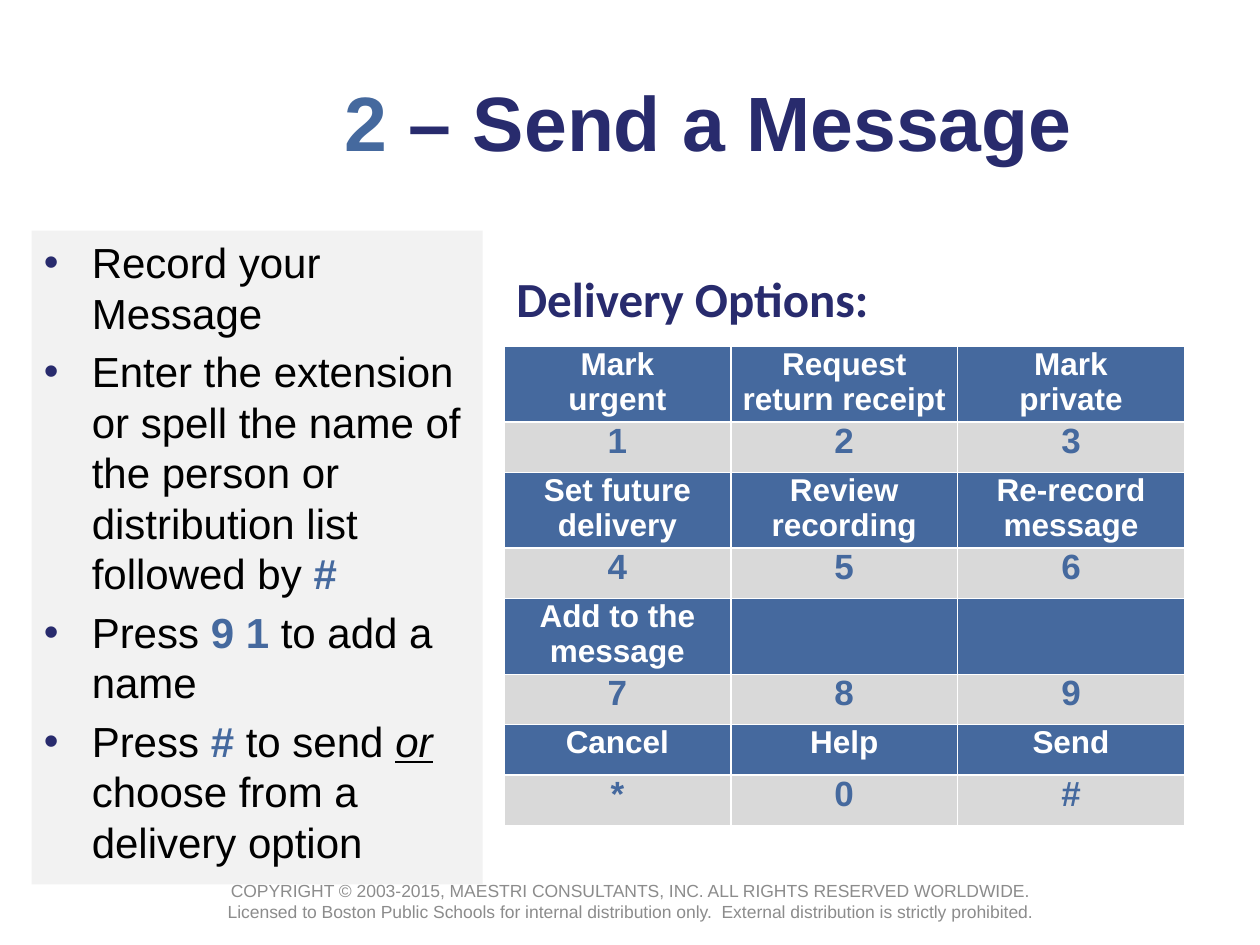
from lxml import etree
from pptx import Presentation
from pptx.dml.color import RGBColor
from pptx.enum.shapes import MSO_SHAPE
from pptx.enum.text import MSO_ANCHOR, PP_ALIGN
from pptx.oxml.ns import qn
from pptx.util import Pt

PX = 9144
CENTER, LEFT = PP_ALIGN.CENTER, PP_ALIGN.LEFT
MIDDLE, TOP = MSO_ANCHOR.MIDDLE, MSO_ANCHOR.TOP
RECTANGLE = MSO_SHAPE.RECTANGLE

NAVY = RGBColor(0x28, 0x2B, 0x6D)
BLUE = RGBColor(0x45, 0x69, 0x9E)
GRAY = RGBColor(0x8C, 0x8C, 0x8C)
SILVER = RGBColor(0xD9, 0xD9, 0xD9)
PALE = RGBColor(0xF2, 0xF2, 0xF2)
WHITE = RGBColor(0xFF, 0xFF, 0xFF)
BLACK = RGBColor(0, 0, 0)

KEY = {"color": BLUE, "bold": True}
STEPS = [
    [("Record your Message", {})],
    [("Enter the extension or spell the name of the person or distribution list followed by ", {}),
     ("#", KEY)],
    [("Press ", {}), ("9 1", KEY), (" to add a name", {})],
    [("Press ", {}), ("# ", KEY), ("to send ", {}),
     ("or", {"italic": True, "underline": True}), (" choose from a delivery option", {})],
]
OPTIONS = [
    (["Mark\nurgent", "Request return receipt", "Mark\nprivate"], "123"),
    (["Set future delivery", "Review recording", "Re-record message"], "456"),
    (["Add to the message", "", ""], "789"),
    (["Cancel", "Help", "Send"], "*0#"),
]
FOOTER = ("COPYRIGHT © 2003-2015, MAESTRI CONSULTANTS, INC. ALL RIGHTS RESERVED WORLDWIDE.\v"
          "Licensed to Boston Public Schools for internal distribution only.  "
          "External distribution is strictly prohibited.")


def emu(*lengths):
    """Turn px lengths into EMU."""
    return [length * PX for length in lengths]


def add_bullet(para, indent, color):
    """Give a paragraph a hanging round bullet."""
    props = para._p.get_or_add_pPr()
    props.set("marL", str(indent * PX))
    props.set("indent", str(-indent * PX))
    fill = etree.SubElement(props, qn("a:buClr"))
    etree.SubElement(fill, qn("a:srgbClr")).set("val", str(color))
    etree.SubElement(props, qn("a:buFont")).set("typeface", "Arial")
    etree.SubElement(props, qn("a:buChar")).set("char", "•")


def write(frame, paragraphs, size, color, font="Arial", bold=False, align=LEFT,
          anchor=None, bullet=None, gap=0):
    """Fill a text frame with paragraphs made of (text, format) spans."""
    frame.word_wrap = True
    if anchor is not None:
        frame.vertical_anchor = anchor
    for index, spans in enumerate(paragraphs):
        para = frame.add_paragraph() if index else frame.paragraphs[0]
        para.alignment = align
        if index and gap:
            para.space_before = Pt(gap)
        if bullet:
            add_bullet(para, 38, bullet)
        for text, style in spans:
            for part, line in enumerate(text.split("\v")):
                if part:
                    para.add_line_break()
                span = para.add_run()
                span.text = line
                span.font.name = font
                span.font.size = Pt(size)
                span.font.bold = style.get("bold", bold)
                span.font.italic = style.get("italic", False)
                span.font.underline = style.get("underline", False)
                span.font.color.rgb = style.get("color", color)


def add_title(page, left, top, width, height):
    """Place the slide title in its placeholder."""
    title = page.shapes.title
    title.left, title.top, title.width, title.height = emu(left, top, width, height)
    write(title.text_frame, [[("2", {"color": BLUE}), (" – Send a Message", {})]],
          size=44, color=NAVY, bold=True, align=CENTER, anchor=MIDDLE)


def add_steps(page, left, top, width, height):
    """Draw the panel with the bulleted steps."""
    panel = page.shapes.add_shape(RECTANGLE, *emu(left, top, width, height))
    panel.shadow.inherit = False
    panel.fill.solid()
    panel.fill.fore_color.rgb = PALE
    panel.line.fill.background()
    write(panel.text_frame, STEPS, size=24, color=BLACK, anchor=TOP,
          bullet=NAVY, gap=4.8)


def fill_cell(cell, text, size, color, fill):
    """Format one table cell."""
    cell.margin_left = cell.margin_right = 7 * PX
    cell.margin_top = cell.margin_bottom = 0
    cell.fill.solid()
    cell.fill.fore_color.rgb = fill
    lines = [[(line, {})] for line in text.split("\n")]
    write(cell.text_frame, lines, size=size, color=color, bold=True, align=CENTER)


def add_options(page, left, top, width, row_height):
    """Place the heading and the keypad table of delivery options."""
    heading = page.shapes.add_textbox(*emu(left, top, 303, 57))
    write(heading.text_frame, [[("Delivery Options:", {})]],
          size=28, color=NAVY, font="Calibri", bold=True)
    rows = 2 * len(OPTIONS)
    table = page.shapes.add_table(
        rows, 3, *emu(left, top + 67, width, rows * row_height)).table
    table.horz_banding = False
    for row in table.rows:
        row.height = row_height * PX
    for index, (labels, keys) in enumerate(OPTIONS):
        for column, (label, key) in enumerate(zip(labels, keys)):
            fill_cell(table.cell(2 * index, column), label, 18, WHITE, BLUE)
            fill_cell(table.cell(2 * index + 1, column), key, 20, BLUE, SILVER)


def add_footer(page, left, top, width, height):
    """Place the copyright notice."""
    box = page.shapes.add_textbox(*emu(left, top, width, height))
    write(box.text_frame, [[(FOOTER, {})]], size=10, color=GRAY,
          align=CENTER, anchor=MIDDLE)


def main():
    """Build and save the deck."""
    deck = Presentation()
    deck.slide_width, deck.slide_height = emu(1000, 750)
    page = deck.slides.add_slide(deck.slide_layouts[5])
    add_title(page, 175, 33, 775, 125)
    add_footer(page, 150, 695, 700, 40)
    add_options(page, 400, 208, 540, 40)
    add_steps(page, 25, 183, 358, 519)
    deck.save("out.pptx")


if __name__ == "__main__":
    main()
